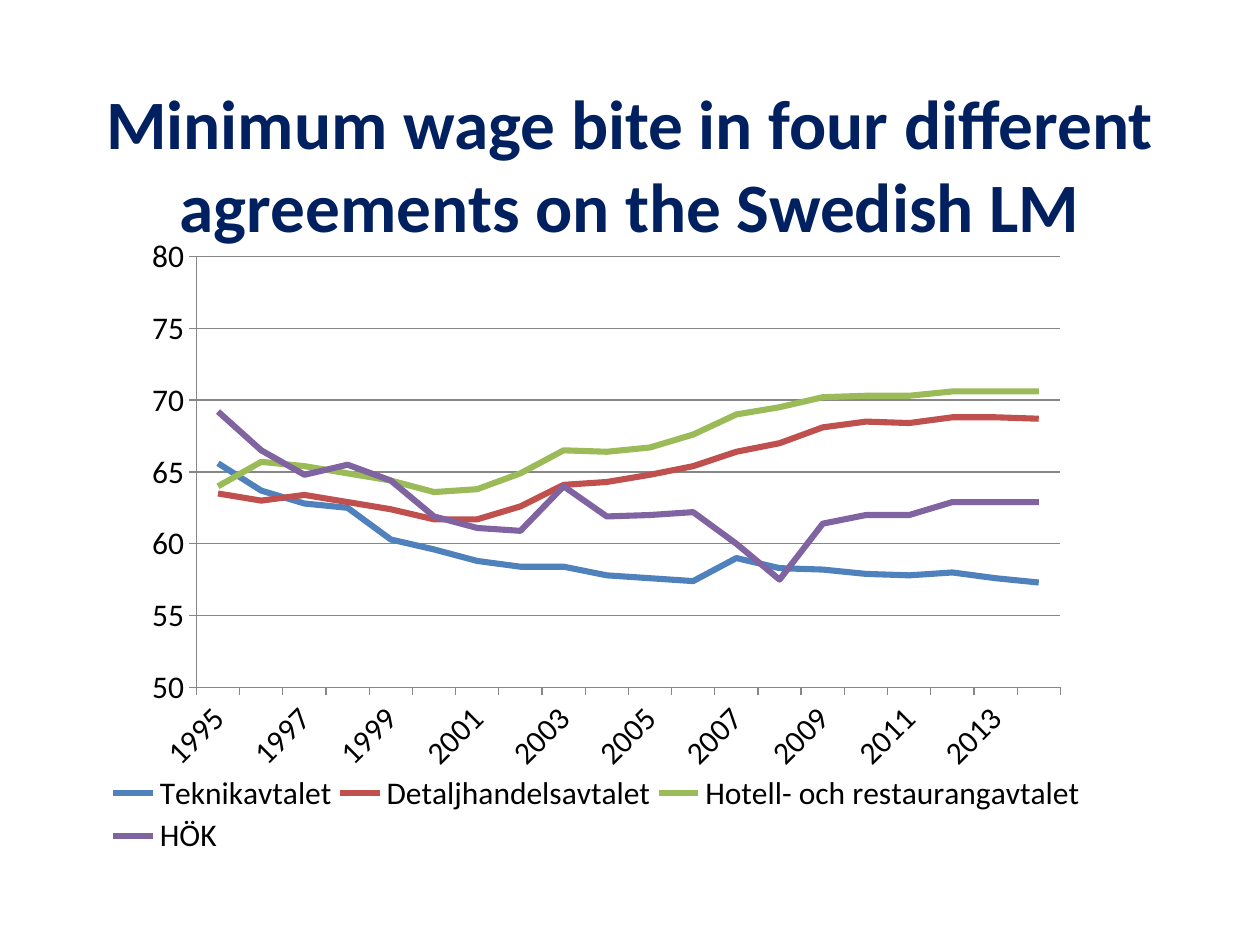
from lxml import etree
from pptx import Presentation
from pptx.chart.data import CategoryChartData
from pptx.dml.color import RGBColor
from pptx.enum.chart import XL_CHART_TYPE, XL_LEGEND_POSITION, XL_TICK_MARK
from pptx.enum.text import MSO_ANCHOR, PP_ALIGN
from pptx.oxml.ns import qn
from pptx.util import Pt

LINE_CHART = XL_CHART_TYPE.LINE
LEGEND_RIGHT = XL_LEGEND_POSITION.RIGHT
TICK_OUT = XL_TICK_MARK.OUTSIDE
TICK_NONE = XL_TICK_MARK.NONE
TOP = MSO_ANCHOR.TOP
CENTER = PP_ALIGN.CENTER

NAVY = RGBColor(0x00, 0x20, 0x60)
BLACK = RGBColor(0x00, 0x00, 0x00)
GRAY = RGBColor(0x86, 0x86, 0x86)
BLUE = RGBColor(0x4F, 0x81, 0xBD)
RED = RGBColor(0xC0, 0x50, 0x4D)
GREEN = RGBColor(0x9B, 0xBB, 0x59)
PURPLE = RGBColor(0x80, 0x64, 0xA2)

FONT = "Calibri"
EMU_PER_PX = 914400 / 126

AGREEMENTS = [
    ("Teknikavtalet", BLUE,
     [65.6, 63.7, 62.8, 62.5, 60.3, 59.6, 58.8, 58.4, 58.4, 57.8,
      57.6, 57.4, 59, 58.3, 58.2, 57.9, 57.8, 58, 57.6, 57.3]),
    ("Detaljhandelsavtalet", RED,
     [63.5, 63, 63.4, 62.9, 62.4, 61.7, 61.7, 62.6, 64.1, 64.3,
      64.8, 65.4, 66.4, 67, 68.1, 68.5, 68.4, 68.8, 68.8, 68.7]),
    ("Hotell- och restaurangavtalet", GREEN,
     [64, 65.7, 65.4, 64.9, 64.4, 63.6, 63.8, 64.9, 66.5, 66.4,
      66.7, 67.6, 69, 69.5, 70.2, 70.3, 70.3, 70.6, 70.6, 70.6]),
    ("HÖK", PURPLE,
     [69.2, 66.5, 64.8, 65.5, 64.4, 61.9, 61.1, 60.9, 64, 61.9,
      62, 62.2, 60, 57.5, 61.4, 62, 62, 62.9, 62.9, 62.9]),
]


def px(*lengths):
    return [round(length * EMU_PER_PX) for length in lengths]


def manual_layout(**values):
    """Return a c:layout element with positions as fractions of the chart."""
    layout = etree.Element(qn("c:layout"))
    manual = etree.SubElement(layout, qn("c:manualLayout"))
    for name, value in values.items():
        etree.SubElement(manual, qn(f"c:{name}")).set("val", str(value))
    return layout


deck = Presentation()
deck.slide_width, deck.slide_height = px(1260, 945)
page = deck.slides.add_slide(deck.slide_layouts[6])

# Chart
data = CategoryChartData(number_format="0.0")
data.categories = [str(year) for year in range(1995, 2015)]
for name, color, values in AGREEMENTS:
    data.add_series(name, values)
chart = page.shapes.add_chart(LINE_CHART, *px(105, 224, 983, 635), data).chart
chart.has_title = False
for key, value in {"name": FONT, "size": Pt(18)}.items():
    setattr(chart.font, key, value)
chart.font.color.rgb = BLACK

plot = chart.plots[0]
plot.vary_by_categories = False
for series, (name, color, values) in zip(plot.series, AGREEMENTS):
    series.smooth = False
    series.format.line.width = Pt(3.5)
    series.format.line.color.rgb = color

years, bite = chart.category_axis, chart.value_axis
bite.minimum_scale, bite.maximum_scale, bite.major_unit = 50, 80, 5
bite.has_major_gridlines = True
bite.tick_labels.number_format = "0"
bite.tick_labels.number_format_is_linked = False
for axis in (years, bite):
    axis.major_tick_mark, axis.minor_tick_mark = TICK_OUT, TICK_NONE
for lines in (years, bite, bite.major_gridlines):
    lines.format.line.color.rgb = GRAY
    lines.format.line.width = Pt(0.75)

# Every second year is labelled, slanting upwards
years.tick_labels.font.size = Pt(18)
years_xml = years.format.line and chart.plots[0].chart.category_axis._element
years_xml.find(qn("c:txPr")).find(qn("a:bodyPr")).set("rot", "-2700000")
skip = etree.Element(qn("c:tickLblSkip"))
skip.set("val", "2")
years_xml.find(qn("c:noMultiLvlLbl")).addprevious(skip)

chart.has_legend = True
chart.legend.position = LEGEND_RIGHT
chart.legend.include_in_layout = False
legend_xml = chart.legend._element
for old in legend_xml.findall(qn("c:layout")):
    legend_xml.remove(old)
legend_xml.find(qn("c:legendPos")).addnext(
    manual_layout(xMode="edge", yMode="edge", x=0, y=0.86, w=1, h=0.14))

plot_area = chart._chartSpace.chart.plotArea
for old in plot_area.findall(qn("c:layout")):
    plot_area.remove(old)
plot_area.insert(0, manual_layout(
    layoutTarget="inner", xMode="edge", yMode="edge",
    x=0.093, y=0.051, w=0.879, h=0.679))

# Title
box = page.shapes.add_textbox(*px(63, 38, 1134, 157))
frame = box.text_frame
frame.word_wrap = True
frame.vertical_anchor = TOP
frame.margin_top, frame.margin_bottom = px(42, 0)
para = frame.paragraphs[0]
para.alignment = CENTER
span = para.add_run()
span.text = "Minimum wage bite in four different agreements on the Swedish LM"
for key, value in {"name": FONT, "size": Pt(39.6), "bold": True}.items():
    setattr(span.font, key, value)
span.font.color.rgb = NAVY

deck.save("out.pptx")
